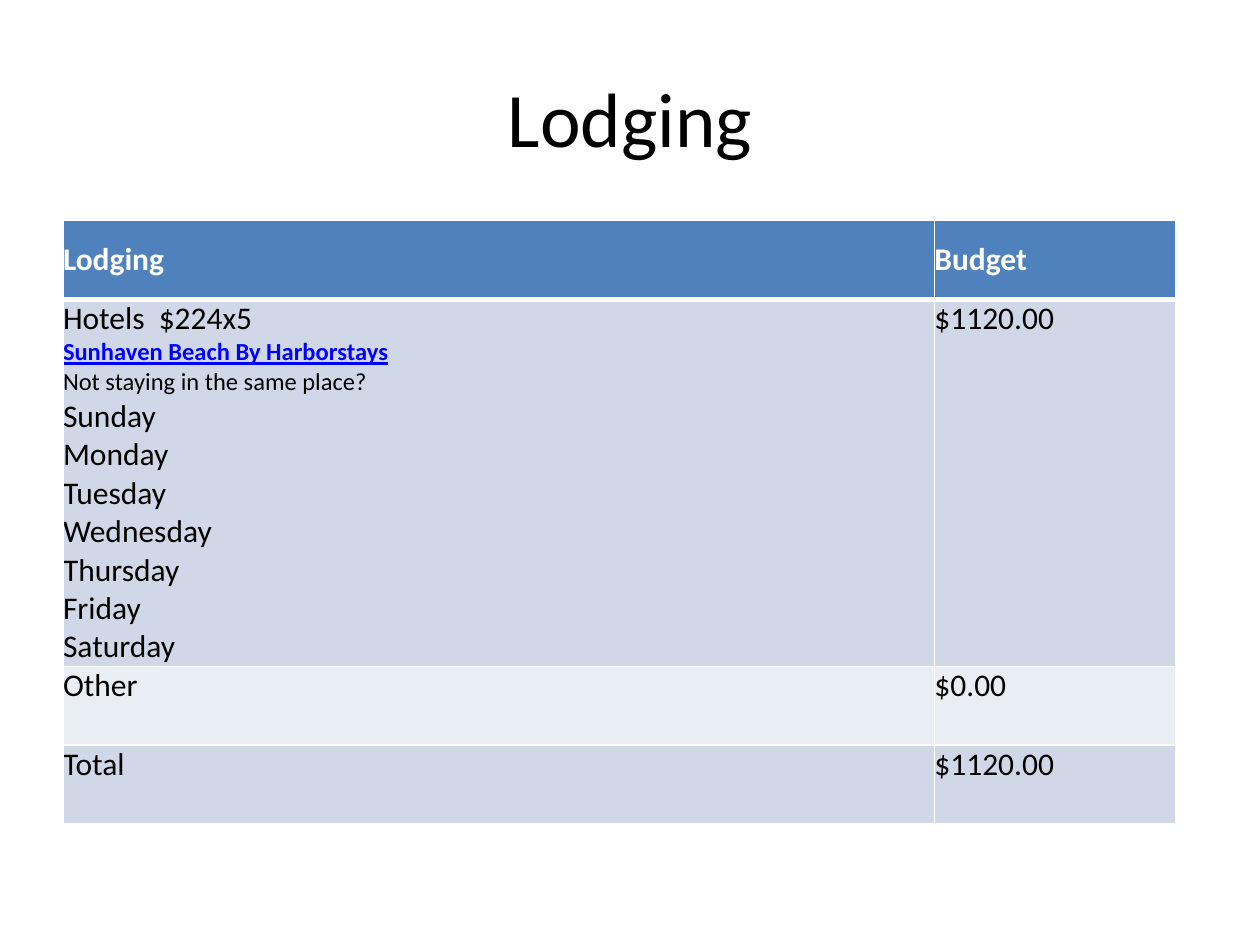
import dataclasses

import lxml.etree
import pptx
import pptx.dml.color
import pptx.enum.text
import pptx.oxml.ns
import pptx.util

Pt = pptx.util.Pt
ALIGN = pptx.enum.text.PP_ALIGN
ANCHOR = pptx.enum.text.MSO_ANCHOR


@dataclasses.dataclass(frozen=True)
class Theme:
    font: str = "Calibri"
    title_size: int = 44
    text_size: int = 18
    small_size: int = 14
    ink: str = "000000"
    white: str = "FFFFFF"
    link: str = "0000FF"
    header: str = "4F81BD"
    bands: tuple = ("D0D8E8", "E9EDF4")
    rule: int = 1
    header_rule: int = 3


def rgb(value):
    return pptx.dml.color.RGBColor.from_string(value)


def write(para, text, *, font, size, color, bold=False, underline=False, align=ALIGN.LEFT):
    """Add formatted text to a paragraph."""
    para.alignment = align
    span = para.add_run()
    span.text = text
    span.font.name = font
    span.font.size = Pt(size)
    span.font.bold = bold
    span.font.underline = underline
    span.font.color.rgb = rgb(color)


class SlideBuilder:
    def __init__(self, page, theme):
        self.page = page
        self.theme = theme

    def title(self, text, left, top, width, height):
        box = self.page.shapes.title
        box.left, box.top, box.width, box.height = map(Pt, (left, top, width, height))
        box.text_frame.vertical_anchor = ANCHOR.MIDDLE
        write(box.text_frame.paragraphs[0], text, font=self.theme.font,
              size=self.theme.title_size, color=self.theme.ink, align=ALIGN.CENTER)

    def table(self, rows, left, top, widths, heights):
        """Each cell is a list of (text, format changes) lines."""
        frame = self.page.shapes.add_table(
            len(rows), len(widths), Pt(left), Pt(top), Pt(sum(widths)), Pt(sum(heights)))
        grid = frame.table
        for column, width in zip(grid.columns, widths):
            column.width = Pt(width)
        for row, height in zip(grid.rows, heights):
            row.height = Pt(height)
        for row_index, row in enumerate(rows):
            for column_index, lines in enumerate(row):
                self.cell(grid.cell(row_index, column_index), lines, row_index)

    def cell(self, cell, lines, row_index):
        theme = self.theme
        is_header = row_index == 0
        cell.margin_left = cell.margin_right = cell.margin_top = cell.margin_bottom = 0
        cell.vertical_anchor = ANCHOR.MIDDLE if is_header else ANCHOR.TOP
        cell.fill.solid()
        cell.fill.fore_color.rgb = rgb(
            theme.header if is_header else theme.bands[(row_index - 1) % 2])
        base = {"font": theme.font, "size": theme.text_size, "bold": is_header,
                "color": theme.white if is_header else theme.ink}
        for index, (text, changes) in enumerate(lines):
            frame = cell.text_frame
            para = frame.add_paragraph() if index else frame.paragraphs[0]
            write(para, text, **(base | changes))
        self.borders(cell, top=theme.header_rule if row_index == 1 else theme.rule,
                     bottom=theme.header_rule if is_header else theme.rule)

    def borders(self, cell, top, bottom):
        qn = pptx.oxml.ns.qn
        properties = cell._tc.get_or_add_tcPr()
        sides = {"a:lnL": self.theme.rule, "a:lnR": self.theme.rule,
                 "a:lnT": top, "a:lnB": bottom}
        for position, (tag, weight) in enumerate(sides.items()):
            line = lxml.etree.Element(qn(tag), w=str(int(Pt(weight))))
            fill = lxml.etree.SubElement(line, qn("a:solidFill"))
            lxml.etree.SubElement(fill, qn("a:srgbClr"), val=self.theme.white)
            properties.insert(position, line)


def main():
    theme = Theme()
    deck = pptx.Presentation()
    deck.slide_width, deck.slide_height = Pt(720), Pt(540)
    title_only = deck.slide_layouts[5]
    slide = SlideBuilder(deck.slides.add_slide(title_only), theme)

    # Title
    slide.title("Lodging", 36, 21.6, 648, 90)

    # Lodging budget
    days = ["Sunday", "Monday", "Tuesday", "Wednesday", "Thursday", "Friday", "Saturday"]
    hotel_lines = [
        ("Hotels  $224x5", {}),
        ("Sunhaven Beach By Harborstays",
         {"size": theme.small_size, "color": theme.link, "bold": True, "underline": True}),
        ("Not staying in the same place?", {"size": theme.small_size}),
        *((day, {}) for day in days),
    ]
    rows = [
        [[("Lodging", {})], [("Budget", {})]],
        [hotel_lines, [("$1120.00", {})]],
        [[("Other", {})], [("$0.00", {})]],
        [[("Total", {})], [("$1120.00", {})]],
    ]
    slide.table(rows, 36, 126, widths=[498, 138], heights=[45, 209, 45, 45])

    deck.save("out.pptx")


if __name__ == "__main__":
    main()
